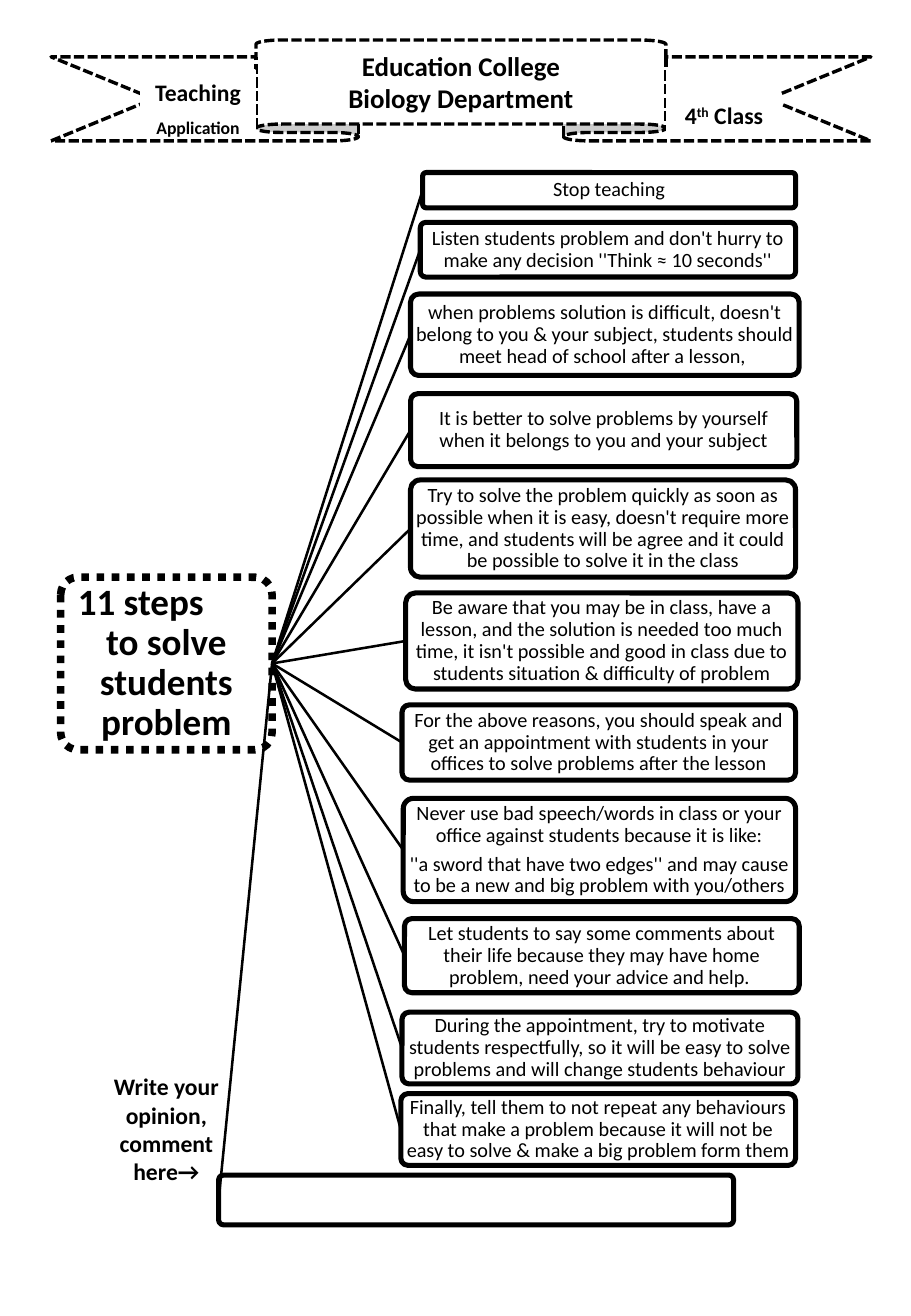
"""Build a one-page handout with eleven steps to solve a student's problem."""
from lxml.etree import SubElement
from pptx import Presentation
from pptx.dml.color import RGBColor
from pptx.enum.dml import MSO_LINE
from pptx.enum.shapes import MSO_CONNECTOR, MSO_SHAPE
from pptx.enum.text import MSO_ANCHOR, MSO_AUTO_SIZE, PP_ALIGN
from pptx.oxml.ns import qn
from pptx.util import Inches, Pt

BLACK = RGBColor(0, 0, 0)
WHITE = RGBColor(255, 255, 255)
RIGHT_SIDE, LEFT_SIDE = 3, 1

STEPS = [
    (3.48, 1.42, 3.07, 0.29, ["Stop teaching"]),
    (3.46, 1.83, 3.09, 0.45, ["Listen students problem and don't hurry to make any decision ''Think ≈ 10 seconds''"]),
    (3.38, 2.42, 3.2, 0.67, ["when problems solution is difficult, doesn't belong to you & your subject, "
                             "students should meet head of school after a lesson, "]),
    (3.38, 3.24, 3.18, 0.6, ["It is better to solve problems by yourself when it belongs to you and your subject"]),
    (3.38, 3.95, 3.17, 0.8, ["Try to solve the problem quickly as soon as possible when it is easy, doesn't require "
                             "more time, and students will be agree and it could be possible to solve it in the class"]),
    (3.34, 4.88, 3.23, 0.79, ["Be aware that you may be in class, have a lesson, and the solution is needed too much "
                              "time, it isn't possible and good in class due to students situation & difficulty of "
                              "problem"]),
    (3.31, 5.8, 3.24, 0.62, ["For the above reasons, you should speak and get an appointment with students in your "
                             "offices to solve problems after the lesson"]),
    (3.32, 6.57, 3.23, 0.85, ["Never use bad speech/words in class or your office against students because it is like:",
                              "''a sword that have two edges'' and may cause to be a new and big problem with "
                              "you/others"]),
    (3.33, 7.56, 3.25, 0.61, ["Let students to say some comments about their life because they may have home problem, "
                              "need your advice and help. "]),
    (3.31, 8.33, 3.26, 0.59, ["During the appointment, try to motivate students respectfully, so it will be easy to "
                              "solve problems and will change students behaviour"]),
    (3.3, 9, 3.25, 0.59, ["Finally, tell them to not repeat any behaviours that make a problem because it will not be "
                          "easy to solve & make a big problem form them"]),
]


def write_text(shape, paragraphs, size=14, bold=True, spacing=1.0, gap=0, margins=(0.1, 0.05, 0.1, 0.05)):
    """Fill a shape with paragraphs, each a string or a list of (text, size, baseline) runs."""
    frame = shape.text_frame
    frame.word_wrap = True
    frame.auto_size = MSO_AUTO_SIZE.NONE
    frame.vertical_anchor = MSO_ANCHOR.MIDDLE
    frame.margin_left, frame.margin_top, frame.margin_right, frame.margin_bottom = map(Inches, margins)
    for index, runs in enumerate(paragraphs):
        paragraph = frame.add_paragraph() if index else frame.paragraphs[0]
        paragraph.alignment = PP_ALIGN.CENTER
        paragraph.line_spacing = spacing
        if index < len(paragraphs) - 1:
            paragraph.space_after = Pt(gap)
        for text, run_size, baseline in [(runs, size, 0)] if isinstance(runs, str) else runs:
            run = paragraph.add_run()
            run.text = text
            font = run.font
            font.name, font.size, font.bold = "Calibri", Pt(run_size), bold
            font.color.rgb = BLACK
            if baseline:
                run._r.get_or_add_rPr().set("baseline", str(baseline * 1000))


class Handout:
    """Holds the slide and the black-on-white style of its elements."""

    def __init__(self, slide):
        """Keep the slide that receives the elements."""
        self.slide = slide

    def outline(self, kind, left, top, width, height, color=BLACK, weight=3.0, dash=None):
        """Add a white shape with an outline."""
        shape = self.slide.shapes.add_shape(kind, Inches(left), Inches(top), Inches(width), Inches(height))
        shape.shadow.inherit = False
        shape.fill.solid()
        shape.fill.fore_color.rgb = WHITE
        shape.line.color.rgb = color
        shape.line.width = Pt(weight)
        if dash is not None:
            shape.line.dash_style = dash
        return shape

    def box(self, left, top, width, height, **style):
        """Add a slightly rounded box."""
        shape = self.outline(MSO_SHAPE.ROUNDED_RECTANGLE, left, top, width, height, **style)
        shape.adjustments[0] = 0.1
        return shape

    def label(self, left, top, width, height, paragraphs, **text_format):
        """Add a white label without a visible border."""
        shape = self.outline(MSO_SHAPE.RECTANGLE, left, top, width, height, color=WHITE, weight=2)
        write_text(shape, paragraphs, **text_format)

    def join(self, hub, target):
        """Draw a line from the hub's right side to the target's left side."""
        line = self.slide.shapes.add_connector(MSO_CONNECTOR.STRAIGHT, 0, 0, 0, 0)
        line.begin_connect(hub, RIGHT_SIDE)
        line.end_connect(target, LEFT_SIDE)
        line.line.color.rgb = BLACK
        line.line.width = Pt(1.5)
        SubElement(line._element.spPr, qn("a:effectLst"))

    def title(self, left, top, width, height, paragraphs, **text_format):
        """Place the title in front of the elements added so far."""
        title = self.slide.shapes.title
        title.left, title.top, title.width, title.height = map(Inches, (left, top, width, height))
        write_text(title, paragraphs, **text_format)
        title._element.getparent().append(title._element)


def main():
    """Build and save the handout."""
    presentation = Presentation()
    presentation.slide_width, presentation.slide_height = Inches(7.5), Inches(10.83)
    handout = Handout(presentation.slides.add_slide(presentation.slide_layouts[5]))

    handout.label(0.83, 8.83, 1.08, 0.92, ["Write your opinion, comment here→"])
    hub = handout.box(0.5, 4.75, 1.74, 1.42, weight=4.5, dash=MSO_LINE.ROUND_DOT)
    write_text(hub, ["11 steps", "to solve students problem"], size=22, spacing=0.9, margins=(0.02,) * 4)
    first_line = hub.text_frame.paragraphs[0]
    first_line.alignment = PP_ALIGN.LEFT
    first_line._p.get_or_add_pPr().set("marL", str(Inches(0.08)))

    for *place, paragraphs in STEPS:
        step = handout.box(*place)
        write_text(step, paragraphs, size=12, bold=False, spacing=0.9, gap=4.2, margins=(0.01,) * 4)
        handout.join(hub, step)
    handout.join(hub, handout.box(1.8, 9.67, 4.24, 0.41))

    handout.outline(MSO_SHAPE.UP_RIBBON, 0.42, 0.33, 6.75, 0.83, weight=2, dash=MSO_LINE.SQUARE_DOT)
    handout.title(2.11, 0.33, 3.37, 0.69, ["Education College", "Biology Department"], size=16)
    handout.label(5.5, 0.58, 0.92, 0.5, [[("4", 14, 0), ("th", 14, 30), (" Class", 14, 0)]],
                  margins=(0.1, 0.24, 0.1, 0))
    handout.label(1.17, 0.58, 0.92, 0.5, [[("Teaching ", 14, 0), ("Application", 10.5, 0)]], spacing=1.5)
    presentation.save("out.pptx")


if __name__ == "__main__":
    main()
